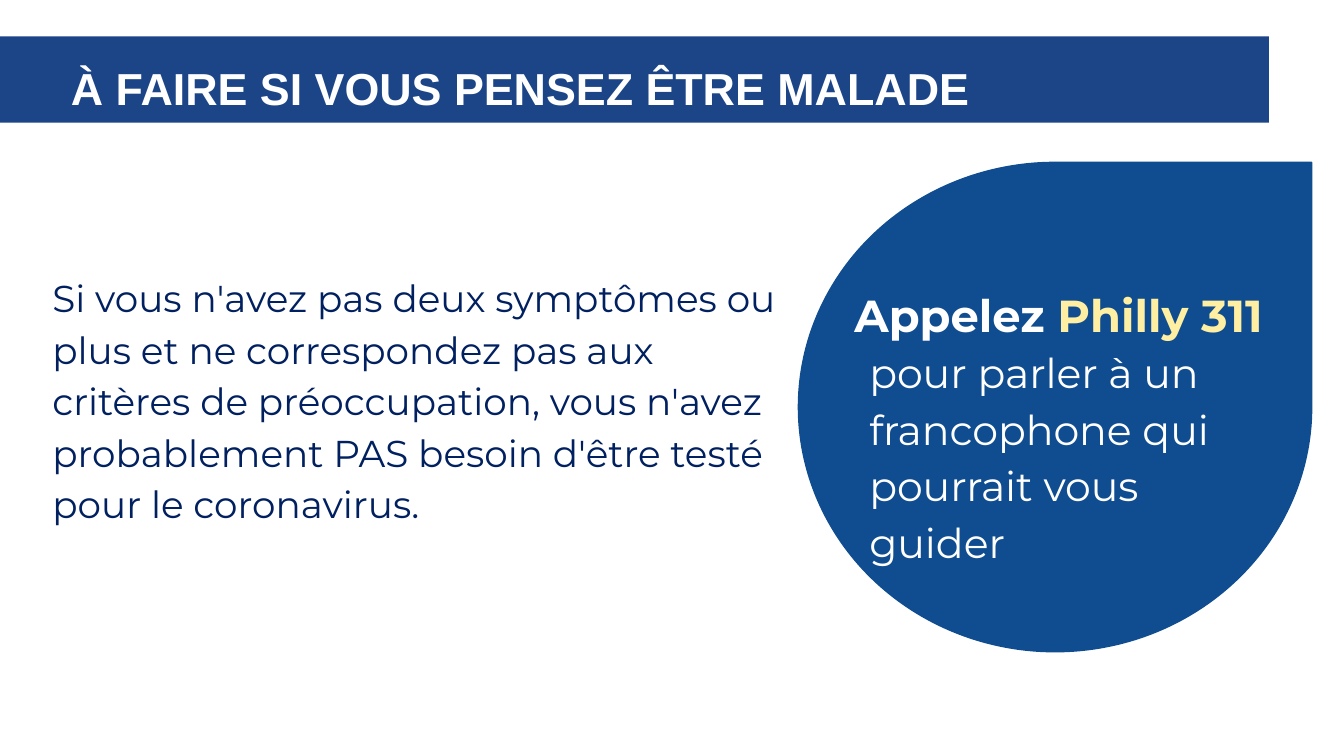
from pptx import Presentation
from pptx.dml.color import RGBColor
from pptx.enum.shapes import MSO_SHAPE
from pptx.enum.text import MSO_ANCHOR
from pptx.util import Cm, Pt

RECTANGLE = MSO_SHAPE.RECTANGLE
TEARDROP = MSO_SHAPE.TEAR
TOP = MSO_ANCHOR.TOP

WHITE = RGBColor(0xFF, 0xFF, 0xFF)
NAVY = RGBColor(0x00, 0x20, 0x60)
BANNER_BLUE = RGBColor(0x1C, 0x45, 0x87)
DROP_BLUE = RGBColor(0x0F, 0x4D, 0x90)
YELLOW = RGBColor(0xFF, 0xEF, 0xA2)


class SlideBuilder:
    inset = Cm(0.25)

    def __init__(self, slide):
        self.slide = slide

    def shape(self, kind, left, top, width, height, color, outlined=False):
        sp = self.slide.shapes.add_shape(
            kind, Cm(left), Cm(top), Cm(width), Cm(height))
        sp.shadow.inherit = False
        sp.fill.solid()
        sp.fill.fore_color.rgb = color
        if outlined:
            sp.line.color.rgb = color
            sp.line.width = Pt(0.75)
        else:
            sp.line.fill.background()
        return sp

    def text(self, left, top, width, height, runs, size,
             font="Montserrat", bold=False, spacing=1.15):
        """Add one paragraph made of (text, color) runs."""
        box = self.slide.shapes.add_textbox(
            Cm(left), Cm(top), Cm(width), Cm(height))
        tf = box.text_frame
        tf.word_wrap = True
        tf.vertical_anchor = TOP
        tf.margin_left = tf.margin_right = self.inset
        tf.margin_top = tf.margin_bottom = self.inset
        p = tf.paragraphs[0]
        p.line_spacing = spacing
        for content, color in runs:
            r = p.add_run()
            r.text = content
            r.font.name = font
            r.font.size = Pt(size)
            r.font.bold = bold
            r.font.color.rgb = color
        return box


def main():
    prs = Presentation()
    prs.slide_width = Cm(25.4)
    prs.slide_height = Cm(14.29)
    s = SlideBuilder(prs.slides.add_slide(prs.slide_layouts[6]))

    s.text(0.74, 4.83, 14.35, 4.9, [(
        "Si vous n'avez pas deux symptômes ou plus et ne correspondez pas "
        "aux critères de préoccupation, vous n'avez probablement PAS besoin "
        "d'être testé pour le coronavirus.", NAVY)], 20)

    s.shape(RECTANGLE, 0, 0.69, 23.98, 1.63, BANNER_BLUE)
    s.text(1.09, 0.9, 19.6, 1.5,
           [("À FAIRE SI VOUS PENSEZ ÊTRE MALADE", WHITE)], 24,
           font="Arial", bold=True, spacing=1.0)

    s.shape(TEARDROP, 15.09, 3.07, 9.7, 9.25, DROP_BLUE, outlined=True)
    s.text(15.9, 5.03, 8.9, 2.29,
           [("Appelez", WHITE), (" Philly 311", YELLOW)], 24, bold=True)
    s.text(16.18, 6.18, 8.33, 6.32,
           [("pour parler à un francophone qui pourrait vous guider", WHITE)],
           22)

    prs.save("out.pptx")


if __name__ == "__main__":
    main()
